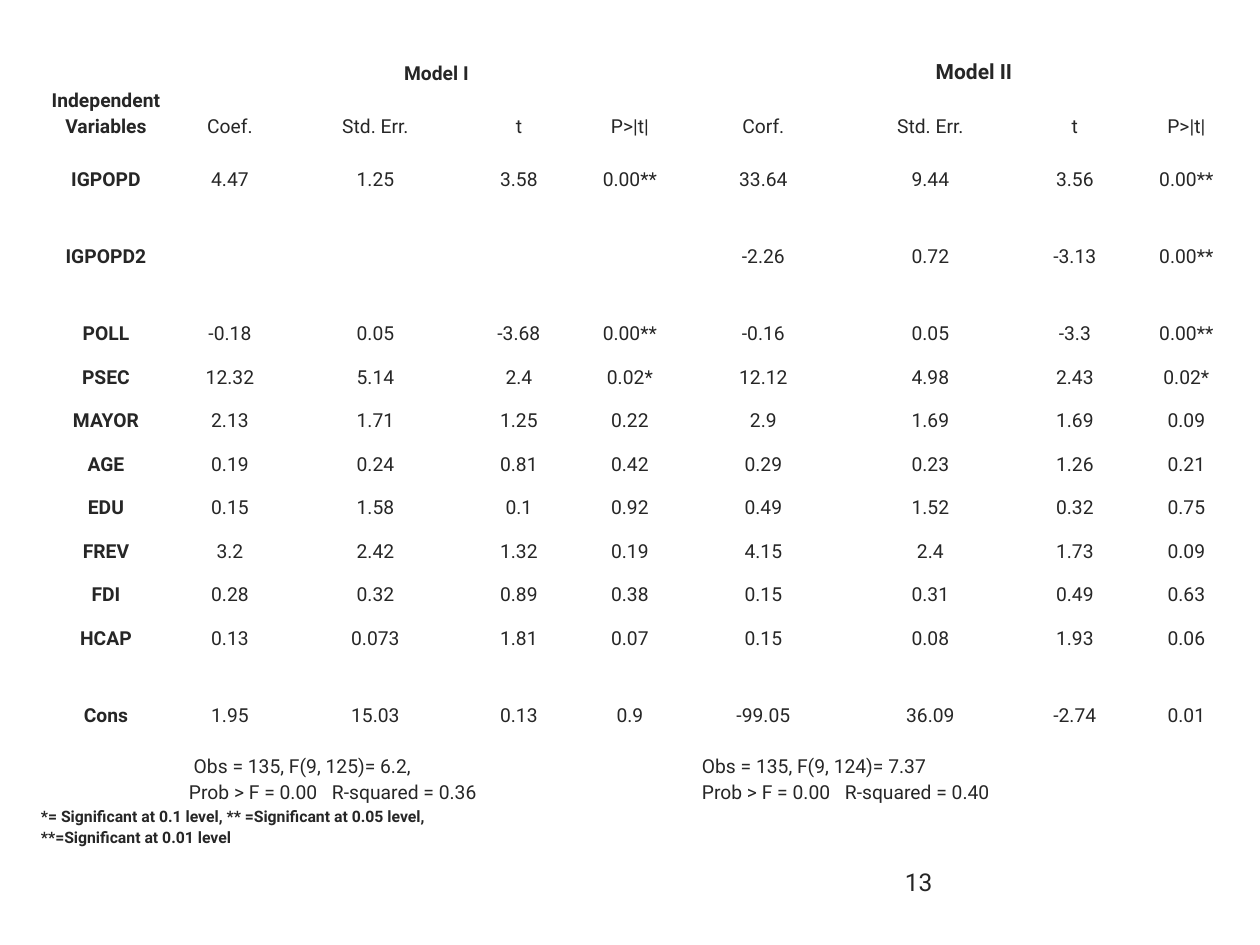
from dataclasses import dataclass

from lxml import etree
from pptx import Presentation
from pptx.dml.color import RGBColor
from pptx.enum.text import MSO_ANCHOR, PP_ALIGN
from pptx.oxml.ns import qn
from pptx.util import Emu, Pt

BOTTOM = MSO_ANCHOR.BOTTOM
LEFT, CENTER, RIGHT = PP_ALIGN.LEFT, PP_ALIGN.CENTER, PP_ALIGN.RIGHT

INK = RGBColor(0x26, 0x26, 0x26)
WHITE = RGBColor(0xFF, 0xFF, 0xFF)
FONT = "Roboto"
EMU_PER_PX = 914400 / 126

COLUMN_WIDTHS = [148, 100, 191, 96, 126, 141, 20, 173, 96, 127]
ROW_HEIGHTS = [43, 52, 53, 77, 77, 44, 43, 44, 43, 44, 43, 44, 77, 77, 44]
VALUE_COLUMNS = [0, 1, 2, 3, 4, 5, 6, 8, 9]
CELL_INSET = 9
STATISTIC_TAB = 143

RESULTS = [
    ["Independent Variables", "Coef.", "Std. Err.", "t", "P>|t|",
     "Corf.", "Std. Err.", "t", "P>|t|"],
    ["IGPOPD", "4.47", "1.25", "3.58", "0.00**", "33.64", "9.44", "3.56", "0.00**"],
    ["IGPOPD2", "", "", "", "", "-2.26", "0.72", "-3.13", "0.00**"],
    ["POLL", "-0.18", "0.05", "-3.68", "0.00**", "-0.16", "0.05", "-3.3", "0.00**"],
    ["PSEC", "12.32", "5.14", "2.4", "0.02*", "12.12", "4.98", "2.43", "0.02*"],
    ["MAYOR", "2.13", "1.71", "1.25", "0.22", "2.9", "1.69", "1.69", "0.09"],
    ["AGE", "0.19", "0.24", "0.81", "0.42", "0.29", "0.23", "1.26", "0.21"],
    ["EDU", "0.15", "1.58", "0.1", "0.92", "0.49", "1.52", "0.32", "0.75"],
    ["FREV", "3.2", "2.42", "1.32", "0.19", "4.15", "2.4", "1.73", "0.09"],
    ["FDI", "0.28", "0.32", "0.89", "0.38", "0.15", "0.31", "0.49", "0.63"],
    ["HCAP", "0.13", "0.073", "1.81", "0.07", "0.15", "0.08", "1.93", "0.06"],
    ["Cons", "1.95", "15.03", "0.13", "0.9", "-99.05", "36.09", "-2.74", "0.01"],
]


@dataclass(frozen=True)
class Entry:
    row: int
    column: int
    text: str
    span: int = 1
    size: int = 11
    bold: bool = False
    align: PP_ALIGN = CENTER


HEADINGS = [
    Entry(0, 1, "Model I", 4, bold=True),
    Entry(0, 5, " Model II", 5, 12, True),
]
FOOTERS = [
    Entry(13, 1, " Obs = 135, F(9, 125)= 6.2,\nProb > F = 0.00\tR-squared = 0.36",
          4, align=LEFT),
    Entry(13, 5, "Obs = 135, F(9, 124)= 7.37\nProb > F = 0.00\tR-squared = 0.40",
          5, align=LEFT),
    Entry(14, 0, "*= Significant at 0.1 level, ** =Significant at 0.05 level,\n"
          "**=Significant at 0.01 level", 5, 9, True, LEFT),
    Entry(14, 5, "", 2),
]


def px(length: int) -> Emu:
    return Emu(round(length * EMU_PER_PX))


def result_entries() -> list[Entry]:
    return [
        Entry(row, column, text, 2 if column == 6 else 1, bold=column == 0)
        for row, values in enumerate(RESULTS, start=1)
        for column, text in zip(VALUE_COLUMNS, values)
    ]


def style_paragraph(paragraph, size: int, bold: bool, align: PP_ALIGN) -> None:
    paragraph.alignment = align
    paragraph.font.name = FONT
    paragraph.font.size = Pt(size)
    paragraph.font.bold = bold
    paragraph.font.color.rgb = INK


def add_tab_stop(paragraph, position: int) -> None:
    properties = paragraph._p.get_or_add_pPr()
    tabs = etree.SubElement(properties, qn("a:tabLst"))
    etree.SubElement(tabs, qn("a:tab"), pos=str(px(position)), algn="l")


def format_cell(cell, row: int) -> None:
    cell.margin_left = cell.margin_right = px(CELL_INSET)
    cell.margin_top = cell.margin_bottom = 0
    cell.vertical_anchor = BOTTOM
    properties = cell._tc.get_or_add_tcPr()
    for side in ("lnL", "lnR", "lnT", "lnB"):
        width = 3 if row == 0 and side == "lnB" else 1
        line = etree.SubElement(properties, qn(f"a:{side}"), w=str(Pt(width)))
        fill = etree.SubElement(line, qn("a:solidFill"))
        etree.SubElement(fill, qn("a:srgbClr"), val=str(WHITE))
    cell.fill.background()


def fill_entry(table, entry: Entry) -> None:
    cell = table.cell(entry.row, entry.column)
    if entry.span > 1:
        cell.merge(table.cell(entry.row, entry.column + entry.span - 1))
    cell.text_frame.text = entry.text
    for paragraph in cell.text_frame.paragraphs:
        paragraph.line_spacing = 1.15
        if "\t" in entry.text:
            add_tab_stop(paragraph, STATISTIC_TAB)
        style_paragraph(paragraph, entry.size, entry.bold, entry.align)


def add_regression_table(slide) -> None:
    table = slide.shapes.add_table(
        len(ROW_HEIGHTS), len(COLUMN_WIDTHS), px(32), px(42),
        px(sum(COLUMN_WIDTHS)), px(sum(ROW_HEIGHTS)),
    ).table
    table.first_row = table.horz_banding = False
    for column, width in zip(table.columns, COLUMN_WIDTHS):
        column.width = px(width)
    for index, (row, height) in enumerate(zip(table.rows, ROW_HEIGHTS)):
        row.height = px(height)
        for cell in row.cells:
            format_cell(cell, index)
    for entry in HEADINGS + result_entries() + FOOTERS:
        fill_entry(table, entry)


def add_page_number(slide) -> None:
    box = slide.shapes.add_textbox(px(829), px(861), px(116), px(63))
    box.text_frame.word_wrap = True
    box.text_frame.text = "13"
    style_paragraph(box.text_frame.paragraphs[0], 14, False, RIGHT)


def main() -> None:
    presentation = Presentation()
    presentation.slide_width = px(1260)
    presentation.slide_height = px(945)
    slide = presentation.slides.add_slide(presentation.slide_layouts[6])
    add_page_number(slide)
    add_regression_table(slide)
    presentation.save("out.pptx")


if __name__ == "__main__":
    main()
